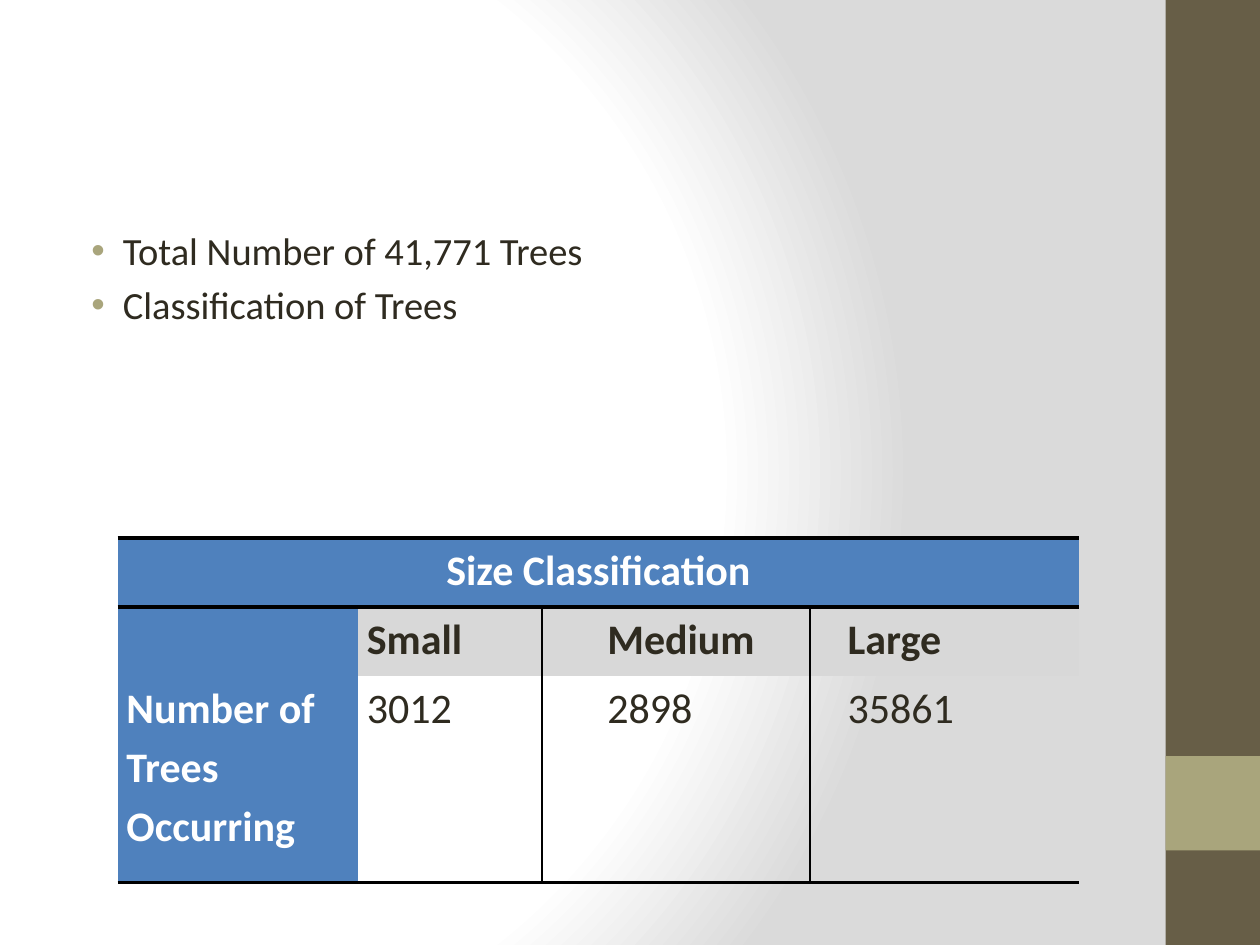
import pptx
import pptx.dml.color
import pptx.enum.shapes
import pptx.enum.text
import pptx.oxml
import pptx.oxml.ns
import pptx.util
from pptx.util import Pt

COLORS = {
    "white": "FFFFFF",
    "shade": "DADADA",
    "bark": "675E47",
    "sage": "A9A57C",
    "ink": "2F2B20",
    "blue": "4F81BD",
    "gray": "D8D8D8",
    "black": "000000",
}
FONT = "Calibri"
NO_STYLE_NO_GRID = "{2D5ABB26-0587-4C30-8999-92F81FD0307C}"
HEAVY, THIN = 2.25, 1


def rgb(name):
    return pptx.dml.color.RGBColor.from_string(COLORS[name])


def drawing_xml(tag, attributes="", content=""):
    """Parse one DrawingML element."""
    namespace = pptx.oxml.ns.nsdecls("a")
    return pptx.oxml.parse_xml(f"<a:{tag} {namespace} {attributes}>{content}</a:{tag}>")


def color_xml(name):
    return f'<a:srgbClr val="{COLORS[name]}"/>'


def set_font(paragraph, size, color, bold=False):
    font = paragraph.font
    font.name, font.size, font.bold = FONT, Pt(size), bold
    font.color.rgb = rgb(color)


def set_background(slide):
    slide.background.fill.solid()
    properties = slide.element.find(".//" + pptx.oxml.ns.qn("p:bgPr"))
    stops = "".join(
        f'<a:gs pos="{position * 1000}">{color_xml(color)}</a:gs>'
        for position, color in ((0, "white"), (75, "white"), (100, "shade"))
    )
    properties[0] = drawing_xml(
        "gradFill",
        'rotWithShape="1"',
        f'<a:gsLst>{stops}</a:gsLst><a:path path="circle">'
        '<a:fillToRect l="20000" t="50000" r="100000" b="50000"/></a:path>',
    )


def add_side_band(slide, left, top, width, height):
    """Draw the full-height band with its square accent."""
    parts = ((top, height, "bark"), (top + height * 0.8, width, "sage"))
    for part_top, part_height, color in parts:
        shape = slide.shapes.add_shape(
            pptx.enum.shapes.MSO_SHAPE.RECTANGLE,
            Pt(left), Pt(part_top), Pt(width), Pt(part_height),
        )
        shape.shadow.inherit = False
        shape.fill.solid()
        shape.fill.fore_color.rgb = rgb(color)
        shape.line.fill.background()


def fill_body(body, left, top, width, height, items):
    body.left, body.top, body.width, body.height = map(Pt, (left, top, width, height))
    body.text_frame.text = "\n".join(items)
    for paragraph in body.text_frame.paragraphs:
        paragraph.space_before = Pt(4.4)
        properties = paragraph._p.get_or_add_pPr()
        properties.set("marL", str(Pt(27)))
        properties.set("indent", str(Pt(-18)))
        properties.append(drawing_xml("buClr", content=color_xml("sage")))
        properties.append(drawing_xml("buFont", 'typeface="Arial"'))
        properties.append(drawing_xml("buChar", 'char="•"'))
        set_font(paragraph, 22, "ink")


def set_borders(cell, **widths):
    """Set the left, right, top and bottom lines; a missing side has none."""
    properties = cell._tc.get_or_add_tcPr()
    for index, side in enumerate("LRTB"):
        width = widths.get(side, 0)
        paint = f"<a:solidFill>{color_xml('black')}</a:solidFill>" if width else "<a:noFill/>"
        properties.insert(index, drawing_xml(f"ln{side}", f'w="{Pt(width)}"', paint))


def format_cell(cell, text, fill, color, bold, align):
    cell.margin_left = cell.margin_right = Pt(5.04)
    cell.margin_top = cell.margin_bottom = 0
    if fill:
        cell.fill.solid()
        cell.fill.fore_color.rgb = rgb(fill)
    else:
        cell.fill.background()
    cell.text = text
    paragraph = cell.text_frame.paragraphs[0]
    paragraph.alignment = align
    paragraph.line_spacing = 1.15
    set_font(paragraph, 24, color, bold)


def add_size_table(slide, left, top, columns, rows):
    values = (
        ("Size Classification", "", "", "", "", ""),
        ("", "Small", "", "Medium", "", "Large"),
        ("Number of Trees Occurring", "3012", "", "2898", "", "35861"),
    )
    frame = slide.shapes.add_table(
        len(rows), len(columns), Pt(left), Pt(top), Pt(sum(columns)), Pt(sum(rows))
    )
    table = frame.table
    table.first_row = table.horz_banding = False
    table._tbl.tblPr.find(pptx.oxml.ns.qn("a:tableStyleId")).text = NO_STYLE_NO_GRID
    for column, width in zip(table.columns, columns):
        column.width = Pt(width)
    for row, height in zip(table.rows, rows):
        row.height = Pt(height)

    alignments = pptx.enum.text.PP_ALIGN
    for r, texts in enumerate(values):
        for c, text in enumerate(texts):
            heading = r == 0 or c == 0
            fill = "blue" if heading else "gray" if r == 1 else None
            cell = table.cell(r, c)
            format_cell(
                cell, text, fill,
                color="white" if heading else "ink",
                bold=heading or r == 1,
                align=alignments.CENTER if r == 0 else alignments.LEFT,
            )
            set_borders(
                cell,
                L=THIN if r and c in (2, 4) else 0,
                R=THIN if r and c in (1, 3) else 0,
                T=HEAVY if r < 2 else 0,
                B=HEAVY if r != 1 else 0,
            )
    table.cell(0, 0).merge(table.cell(0, len(columns) - 1))


def build_slide(presentation):
    slide = presentation.slides.add_slide(presentation.slide_layouts[1])
    title = slide.shapes.title.element
    title.getparent().remove(title)
    set_background(slide)
    add_side_band(slide, 666, 0, 54, 540)
    fill_body(
        slide.placeholders[1], 36, 126, 600, 378,
        ("Total Number of 41,771 Trees", "Classification of Trees"),
    )
    add_size_table(
        slide, 67.2, 307.4,
        columns=(137.4, 105, 32.4, 121, 16.4, 137.4),
        rows=(39.4, 39.4, 118.2),
    )


def main():
    presentation = pptx.Presentation()
    presentation.slide_width, presentation.slide_height = Pt(720), Pt(540)
    build_slide(presentation)
    presentation.save("out.pptx")


if __name__ == "__main__":
    main()
